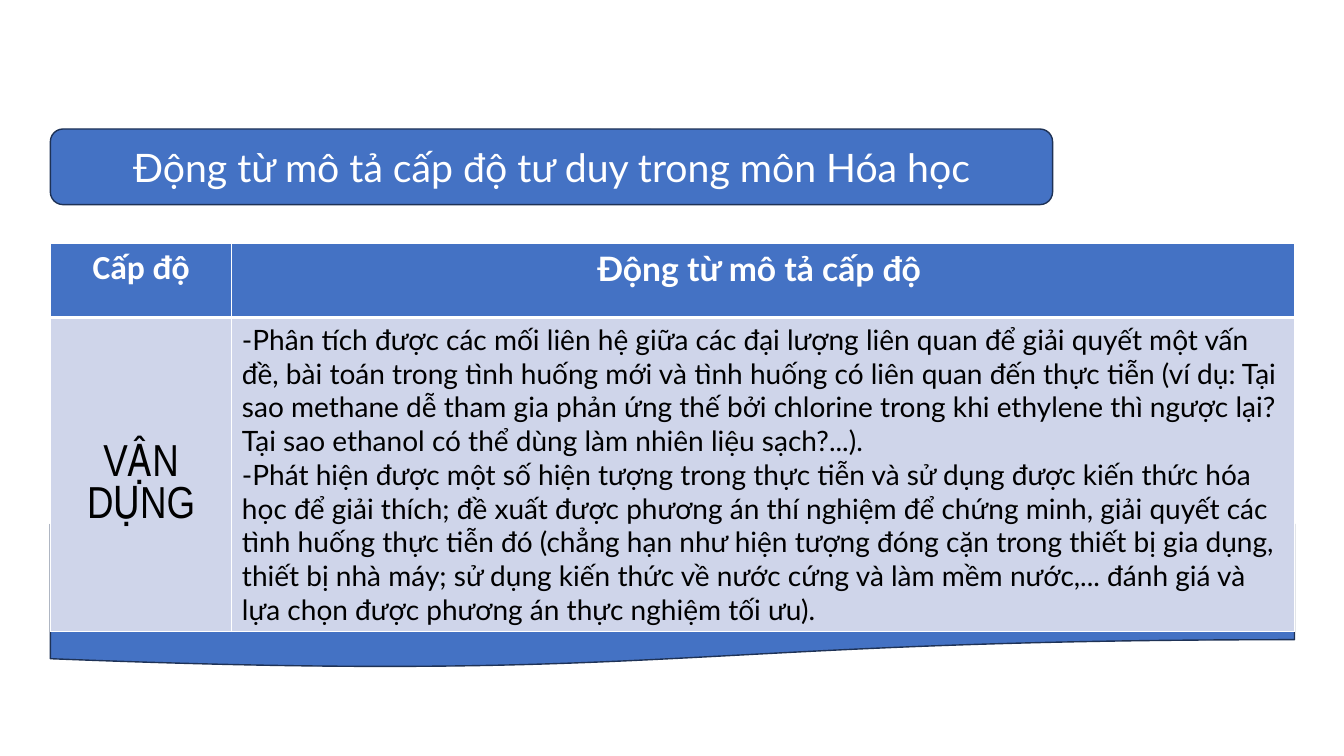
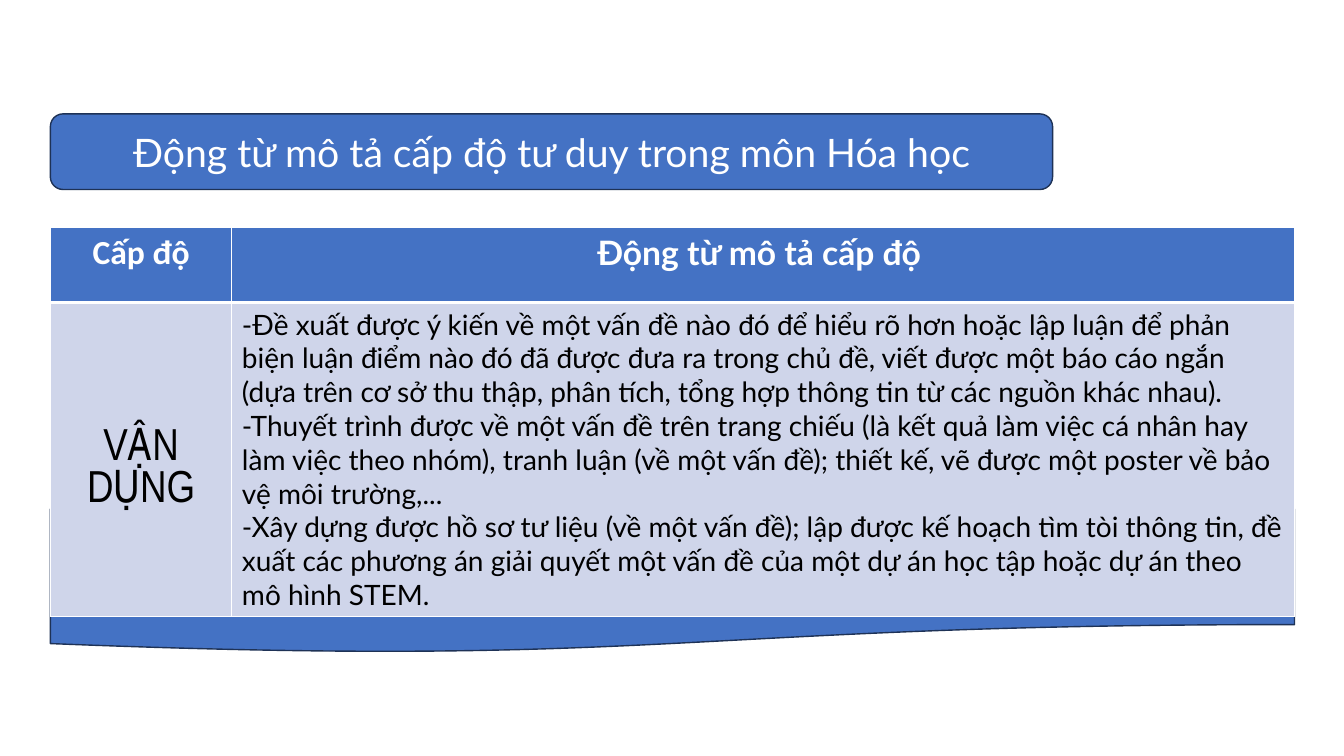
from lxml.etree import SubElement
from pptx import Presentation
from pptx.dml.color import RGBColor
from pptx.enum.shapes import MSO_SHAPE as SHAPE
from pptx.enum.text import MSO_ANCHOR as ANCHOR, MSO_AUTO_SIZE as FIT, PP_ALIGN as ALIGN
from pptx.oxml.ns import qn
from pptx.util import Inches, Pt

BLUE = RGBColor(0x44, 0x72, 0xC4)
NAVY = RGBColor(0x1E, 0x32, 0x56)
PALE = RGBColor(0xCF, 0xD5, 0xEA)
WHITE = RGBColor(0xFF, 0xFF, 0xFF)
BLACK = RGBColor(0x00, 0x00, 0x00)

LEFT, WIDTH = 0.5, 12.34
TITLE_WIDTH, TITLE_HEIGHT = 9.94, 0.75
TABLE_DROP, BAND_DROP, BAND_HEIGHT = 1.13, 3.92, 1.43
COLS, ROWS = (1.8, 10.54), (0.74, 3.1)

TITLE_FONT = dict(name="Lato", size=Pt(28), bold=False)
LEVEL_HEAD_FONT = dict(name="Calibri", size=Pt(24), bold=True)
VERB_HEAD_FONT = dict(name="Lato", size=Pt(24), bold=True)
LEVEL_FONT = dict(name="Arial Narrow", size=Pt(32), bold=False)
VERB_FONT = dict(name="Lato", size=Pt(20), bold=False)

TITLE = "Động từ mô tả cấp độ tư duy trong môn Hóa học"
SLIDES = [
    (1.28, [
        "-Phân tích được các mối liên hệ giữa các đại lượng liên quan để giải quyết một vấn đề, "
        "bài toán trong tình huống mới và tình huống có liên quan đến thực tiễn (ví dụ: Tại sao "
        "methane dễ tham gia phản ứng thế bởi chlorine trong khi ethylene thì ngược lại? Tại sao "
        "ethanol có thể dùng làm nhiên liệu sạch?...).",
        "-Phát hiện được một số hiện tượng trong thực tiễn và sử dụng được kiến thức hóa học để "
        "giải thích; đề xuất được phương án thí nghiệm để chứng minh, giải quyết các tình huống "
        "thực tiễn đó (chẳng hạn như hiện tượng đóng cặn trong thiết bị gia dụng, thiết bị nhà "
        "máy; sử dụng kiến thức về nước cứng và làm mềm nước,... đánh giá và lựa chọn được phương "
        "án thực nghiệm tối ưu).",
    ]),
    (1.13, [
        "-Đề xuất được ý kiến về một vấn đề nào đó để hiểu rõ hơn hoặc lập luận để phản biện luận "
        "điểm nào đó đã được đưa ra trong chủ đề, viết được một báo cáo ngắn (dựa trên cơ sở thu "
        "thập, phân tích, tổng hợp thông tin từ các nguồn khác nhau).",
        "-Thuyết trình được về một vấn đề trên trang chiếu (là kết quả làm việc cá nhân hay làm "
        "việc theo nhóm), tranh luận (về một vấn đề); thiết kế, vẽ được một poster về bảo vệ môi "
        "trường,...",
        "-Xây dựng được hồ sơ tư liệu (về một vấn đề); lập được kế hoạch tìm tòi thông tin, đề "
        "xuất các phương án giải quyết một vấn đề của một dự án học tập hoặc dự án theo mô hình "
        "STEM.",
    ]),
]


class Deck:
    """Holds the shared style and the current slide."""

    def __init__(self):
        self.prs = Presentation()
        self.prs.slide_width, self.prs.slide_height = Inches(13.33), Inches(7.5)
        self.s = None

    def new_slide(self):
        self.s = self.prs.slides.add_slide(self.prs.slide_layouts[5])

    def text(self, tf, texts, font, color, align):
        for i, text in enumerate(texts):
            p = tf.paragraphs[0] if i == 0 else tf.add_paragraph()
            p.alignment = align
            r = p.add_run()
            r.text = text
            for key, value in font.items():
                setattr(r.font, key, value)
            r.font.color.rgb = color

    def shape(self, kind, top, width, height):
        sp = self.s.shapes.add_shape(kind, Inches(LEFT), Inches(top), Inches(width), Inches(height))
        sp.shadow.inherit = False
        sp.fill.solid()
        sp.fill.fore_color.rgb = BLUE
        sp.line.color.rgb = NAVY
        sp.line.width = Pt(1)
        return sp

    def title(self, text, top):
        banner = self.shape(SHAPE.ROUNDED_RECTANGLE, top, TITLE_WIDTH, TITLE_HEIGHT)
        sp = self.s.shapes.title
        for key in ("left", "top", "width", "height"):
            setattr(sp, key, getattr(banner, key))
        banner._element.addnext(sp._element)
        tf = sp.text_frame
        for key, value in dict(word_wrap=True, auto_size=FIT.NONE, vertical_anchor=ANCHOR.MIDDLE).items():
            setattr(tf, key, value)
        self.text(tf, [text], TITLE_FONT, WHITE, ALIGN.CENTER)

    def cell(self, cell, texts, font, color, fill, align, borders):
        tcPr = cell._tc.get_or_add_tcPr()
        for side, width in zip("LRTB", borders):
            ln = SubElement(tcPr, qn(f"a:ln{side}"), w=str(Pt(width)))
            SubElement(SubElement(ln, qn("a:solidFill")), qn("a:srgbClr"), val=str(WHITE))
        cell.fill.solid()
        cell.fill.fore_color.rgb = fill
        self.text(cell.text_frame, texts, font, color, align)

    def table(self, verbs, top):
        frame = self.s.shapes.add_table(2, 2, Inches(LEFT), Inches(top), Inches(WIDTH), Inches(sum(ROWS)))
        tbl = frame.table
        for col, width in zip(tbl.columns, COLS):
            col.width = Inches(width)
        for row, height in zip(tbl.rows, ROWS):
            row.height = Inches(height)
        head = (WHITE, BLUE, ALIGN.CENTER, (1, 1, 1, 3))
        self.cell(tbl.cell(0, 0), ["Cấp độ"], LEVEL_HEAD_FONT, *head)
        self.cell(tbl.cell(0, 1), ["Động từ mô tả cấp độ "], VERB_HEAD_FONT, *head)
        body = (1, 1, 3, 1)
        self.cell(tbl.cell(1, 0), ["VẬN DỤNG"], LEVEL_FONT, BLACK, PALE, ALIGN.CENTER, body)
        self.cell(tbl.cell(1, 1), verbs, VERB_FONT, BLACK, PALE, ALIGN.LEFT, body)
        tbl.cell(1, 0).margin_top = Inches(1.25)


def main():
    deck = Deck()
    for top, verbs in SLIDES:
        deck.new_slide()
        deck.shape(SHAPE.FLOWCHART_DOCUMENT, top + BAND_DROP, WIDTH, BAND_HEIGHT)
        deck.title(TITLE, top)
        deck.table(verbs, top + TABLE_DROP)
    deck.prs.save("out.pptx")


if __name__ == "__main__":
    main()
